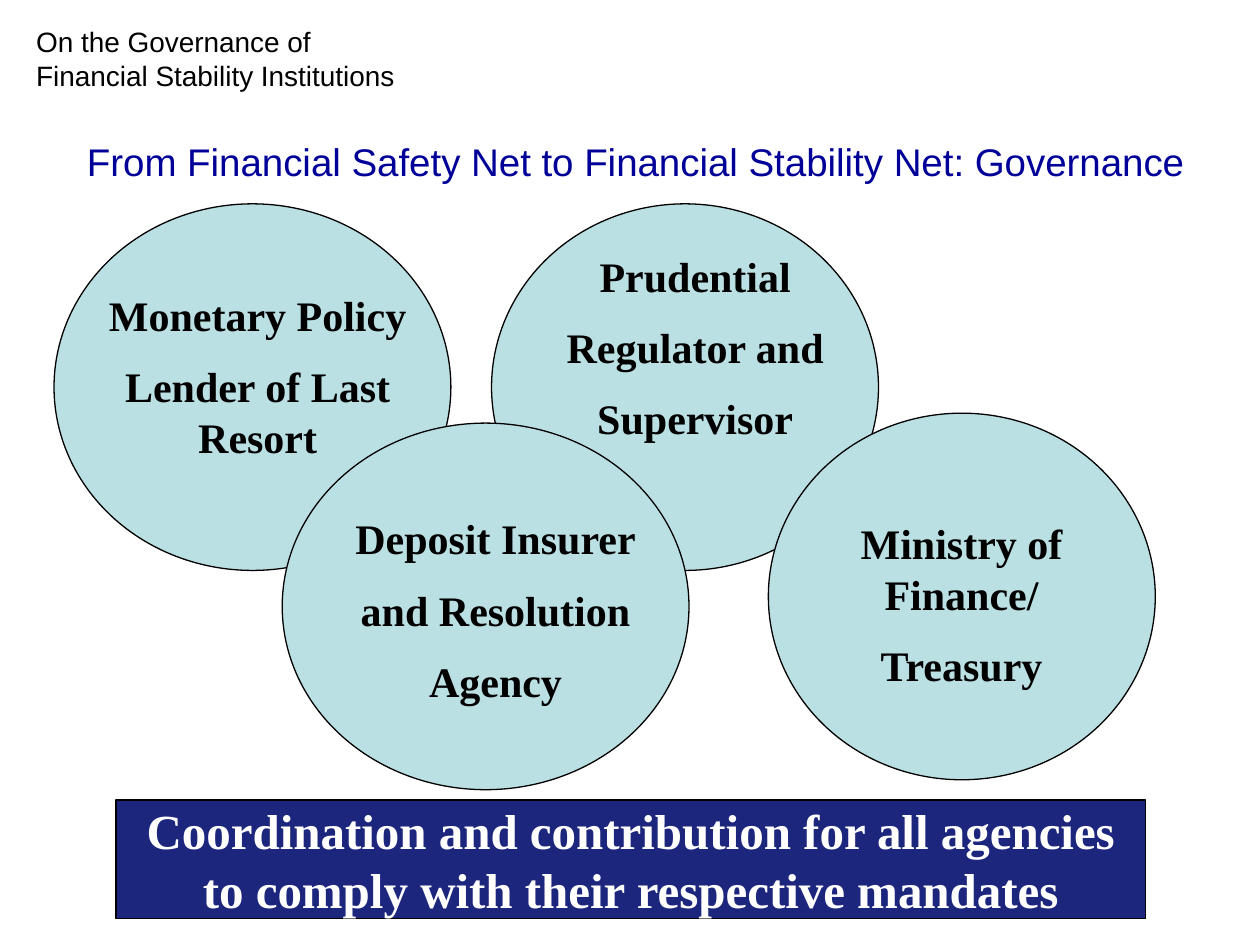
from pptx import Presentation
from pptx.dml.color import RGBColor
from pptx.enum.shapes import MSO_SHAPE
from pptx.enum.text import MSO_ANCHOR, PP_ALIGN
from pptx.util import Cm, Pt

SERIF, SANS = "Times New Roman", "Arial"


def paint(hue):
    """Turn a hex string into a colour."""
    return RGBColor.from_string(hue)


def write(frame, lines, size, face, hue, bold=False, align=PP_ALIGN.CENTER, gap=0):
    """Fill a text frame with one paragraph per line."""
    for num, line in enumerate(lines):
        para = frame.add_paragraph() if num else frame.paragraphs[0]
        para.alignment = align
        if num and gap:
            para.space_before = Pt(gap)
        run = para.add_run()
        run.text = line
        font = run.font
        font.size, font.name, font.bold = Pt(size), face, bold
        font.color.rgb = paint(hue)


def add_form(slide, kind, box, fill):
    """Add a filled shape with a thin black outline."""
    form = slide.shapes.add_shape(kind, *map(Cm, box))
    form.shadow.inherit = False
    form.fill.solid()
    form.fill.fore_color.rgb = paint(fill)
    form.line.color.rgb = paint("000000")
    form.line.width = Pt(0.75)
    return form


def add_text(slide, box):
    """Add a wrapping text box and return its frame."""
    frame = slide.shapes.add_textbox(*map(Cm, box)).text_frame
    frame.word_wrap = True
    return frame


def add_header(slide, box):
    """Place the running header."""
    write(add_text(slide, box),
          ["On the Governance of Financial Stability Institutions"],
          16, SANS, "000000", align=PP_ALIGN.LEFT)


def add_title(slide, box):
    """Place the slide title at the bottom of its box."""
    frame = add_text(slide, box)
    frame.vertical_anchor = MSO_ANCHOR.BOTTOM
    frame.margin_bottom = Cm(0.25)
    write(frame, ["From Financial Safety Net to Financial Stability Net: Governance"],
          22, SANS, "000099")


def add_agency(slide, box, inset, lines):
    """Place an agency's ellipse with its label inset from the corner."""
    add_form(slide, MSO_SHAPE.OVAL, box, "BBE0E3")
    left, top = box[:2]
    right, down, width, height = inset
    frame = add_text(slide, (left + right, top + down, width, height))
    write(frame, lines, 24, SERIF, "000000", True, gap=12)


def add_banner(slide, box):
    """Place the closing statement."""
    frame = add_form(slide, MSO_SHAPE.RECTANGLE, box, "1C267D").text_frame
    frame.word_wrap = False
    frame.vertical_anchor = MSO_ANCHOR.MIDDLE
    write(frame, ["Coordination and contribution for all agencies",
                  "to comply with their respective mandates"],
          28, SERIF, "FFFFFF", True)


def main():
    """Build the slide and save it."""
    deck = Presentation()
    deck.slide_width, deck.slide_height = Cm(25.4), Cm(19.05)
    slide = deck.slides.add_slide(deck.slide_layouts[6])
    add_header(slide, (0.48, 0.38, 8.31, 1.63))
    add_title(slide, (1.07, 2.51, 23.5, 1.45))
    tall = 7.39
    agencies = [
        ((1.09, 4.11, 8, tall), (0.41, 1.6, 7.39, 3.81),
         ["Monetary Policy", "Lender of Last Resort"]),
        ((9.91, 4.11, 7.8, tall), (0.41, 0.81, 7.39, 4.32),
         ["Prudential", "Regulator and", "Supervisor"]),
        ((5.69, 8.53, 8.2, tall), (0.2, 1.68, 8.2, 4.32),
         ["Deposit Insurer", "and Resolution", "Agency"]),
        ((15.49, 8.33, 7.8, tall), (0.2, 1.98, 7.39, 3.81),
         ["Ministry of Finance/", "Treasury"]),
    ]
    for box, inset, lines in agencies:
        add_agency(slide, box, inset, lines)
    add_banner(slide, (2.34, 16.13, 20.75, 2.39))
    deck.save("out.pptx")


if __name__ == "__main__":
    main()
